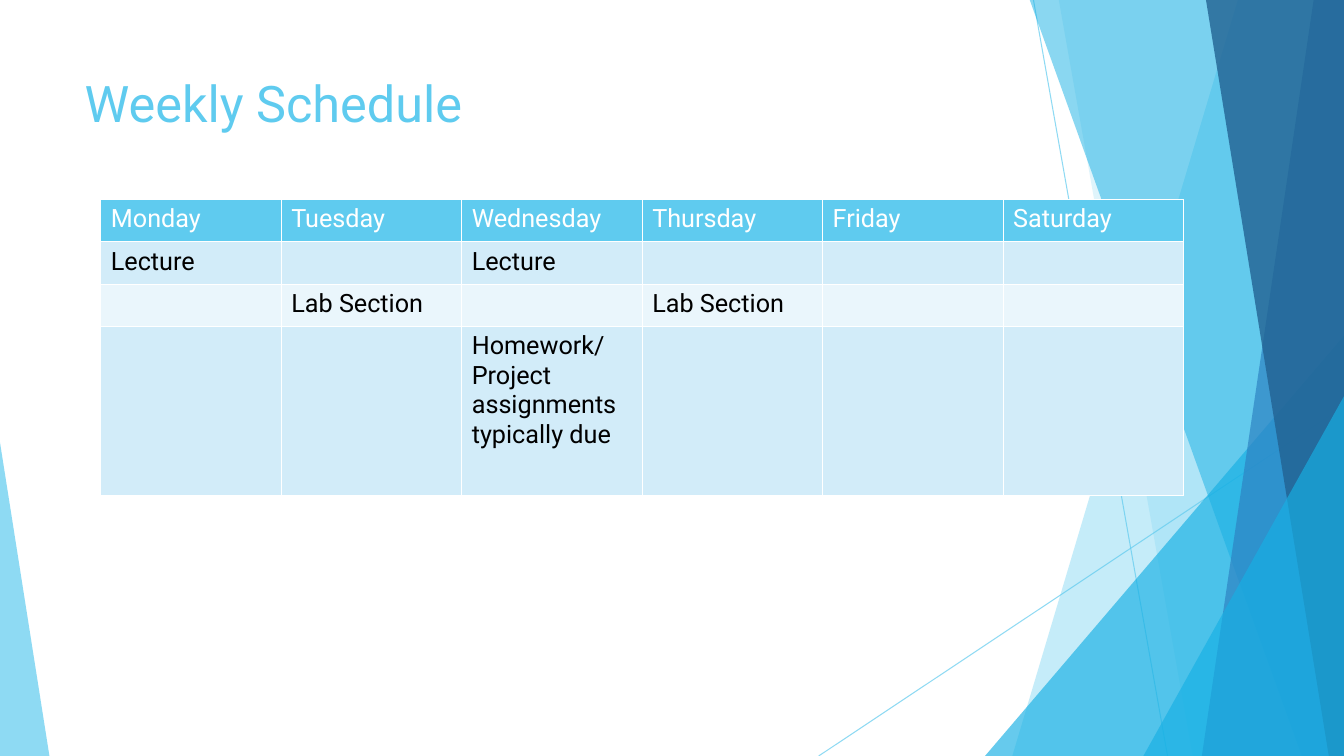
from lxml import etree
from pptx import Presentation
from pptx.dml.color import RGBColor
from pptx.enum.shapes import MSO_CONNECTOR, MSO_SHAPE
from pptx.enum.text import MSO_ANCHOR, MSO_AUTO_SIZE, PP_ALIGN
from pptx.oxml.ns import qn
from pptx.util import Emu, Pt

STRAIGHT = MSO_CONNECTOR.STRAIGHT
TRIANGLE = MSO_SHAPE.ISOSCELES_TRIANGLE
TOP = MSO_ANCHOR.TOP
LEFT = PP_ALIGN.LEFT
NO_FIT = MSO_AUTO_SIZE.NONE

EMU_PER_PX = 9144
WIDTH, HEIGHT = 1333, 750
TITLE_ONLY = 5
COLORS = {
    "sky": "5FCBEF",
    "cyan": "17B0E4",
    "blue": "2E83C3",
    "navy": "226292",
    "band": "D2ECF9",
    "pale": "EAF6FC",
    "white": "FFFFFF",
    "black": "000000",
}

RAYS = [((1025, 0), (1158, 750)), ((1333, 403), (812, 750))]
BACK_PANELS = [(1228, 1004, "sky", 36), (1050, 1183, "sky", 20)]
FRONT_PANELS = [
    (1021, 1291, "cyan", 50),
    (1303, 1192, "blue", 70),
    (1196, 1318, "navy", 80),
]

DAYS = ["Monday", "Tuesday", "Wednesday", "Thursday", "Friday", "Saturday"]
EVENTS = [
    {"Monday": "Lecture", "Wednesday": "Lecture"},
    {"Tuesday": "Lab Section", "Thursday": "Lab Section"},
    {"Wednesday": "Homework/ Project assignments typically due"},
]
ROW_HEIGHTS = [42, 42, 42, 168]


def px(length):
    return Emu(length * EMU_PER_PX)


class SlideBuilder:
    font = "Roboto"

    def __init__(self, page):
        self.page = page

    def paint(self, fill, color, opacity=100):
        fill.solid()
        fill.fore_color.rgb = RGBColor.from_string(COLORS[color])
        if opacity < 100:
            tint = fill._xPr.find(qn("a:solidFill"))[0]
            etree.SubElement(tint, qn("a:alpha"), val=str(opacity * 1000))

    def add_text(self, para, text, size, color):
        para.alignment = LEFT
        span = para.add_run()
        span.text = text
        span.font.name = self.font
        span.font.size = Pt(size)
        span.font.color.rgb = RGBColor.from_string(COLORS[color])

    def title(self, text, left, top, width, height):
        box = self.page.shapes.title
        box.left, box.top = px(left), px(top)
        box.width, box.height = px(width), px(height)
        frame = box.text_frame
        frame.word_wrap = True
        frame.auto_size = NO_FIT
        frame.vertical_anchor = TOP
        self.add_text(frame.paragraphs[0], text, 36, "sky")

    def ray(self, start, end):
        line = self.page.shapes.add_connector(
            STRAIGHT, *(px(value) for value in start + end)
        )
        line.line.width = Pt(0.75)
        self.paint(line.line.fill, "sky", 70)
        etree.SubElement(line._element.spPr, qn("a:effectLst"))

    def finish(self, shape, color, opacity):
        shape.shadow.inherit = False
        self.paint(shape.fill, color, opacity)
        shape.line.fill.background()

    def panel(self, top_x, bottom_x, color, opacity):
        outline = self.page.shapes.build_freeform(top_x, -1, EMU_PER_PX)
        outline.add_line_segments(
            [(WIDTH, -1), (WIDTH, HEIGHT), (bottom_x, HEIGHT)], close=True
        )
        self.finish(outline.convert_to_shape(), color, opacity)

    def corner(self, left, top, width, apex, color, opacity):
        shape = self.page.shapes.add_shape(
            TRIANGLE, px(left), px(top), px(width), px(HEIGHT - top)
        )
        shape.adjustments[0] = apex
        self.finish(shape, color, opacity)

    def borders(self, cell):
        properties = cell._tc.get_or_add_tcPr()
        for index, side in enumerate(("lnL", "lnR", "lnT", "lnB")):
            edge = etree.Element(qn(f"a:{side}"), w=str(Pt(1)))
            fill = etree.SubElement(edge, qn("a:solidFill"))
            etree.SubElement(fill, qn("a:srgbClr"), val=COLORS["white"])
            properties.insert(index, edge)

    def table(self, rows, left, top, column_width, heights):
        columns = len(rows[0])
        grid = self.page.shapes.add_table(
            len(rows), columns, px(left), px(top),
            px(column_width * columns), px(sum(heights)),
        ).table
        for column in grid.columns:
            column.width = px(column_width)
        for index, texts in enumerate(rows):
            grid.rows[index].height = px(heights[index])
            band = "band" if index % 2 else "pale"
            for position, text in enumerate(texts):
                cell = grid.cell(index, position)
                self.paint(cell.fill, band if index else "sky")
                self.borders(cell)
                if text:
                    color = "black" if index else "white"
                    self.add_text(cell.text_frame.paragraphs[0], text, 18, color)


def main():
    deck = Presentation()
    deck.slide_width, deck.slide_height = px(WIDTH), px(HEIGHT)
    builder = SlideBuilder(deck.slides.add_slide(deck.slide_layouts[TITLE_ONLY]))

    for start, end in RAYS:
        builder.ray(start, end)
    for panel in BACK_PANELS:
        builder.panel(*panel)
    builder.corner(977, 333, 356, 1, "cyan", 66)
    for panel in FRONT_PANELS:
        builder.panel(*panel)
    builder.corner(1134, 393, 199, 1, "cyan", 66)
    builder.corner(0, 439, 49, 0, "sky", 70)

    builder.title("Weekly Schedule", 74, 67, 940, 144)
    schedule = [DAYS] + [[row.get(day, "") for day in DAYS] for row in EVENTS]
    builder.table(schedule, 100, 198, 179, ROW_HEIGHTS)
    deck.save("out.pptx")


if __name__ == "__main__":
    main()
